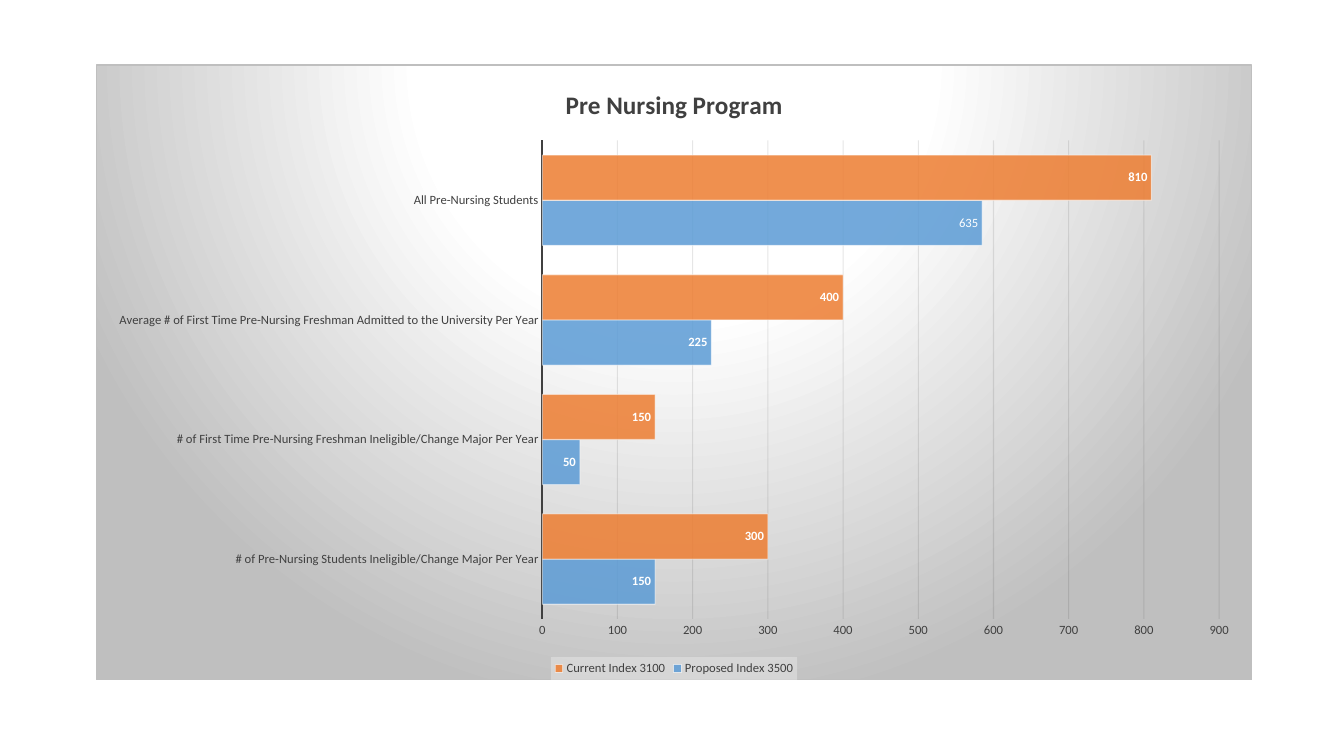
from lxml.etree import SubElement
from pptx import Presentation
from pptx.chart.data import CategoryChartData
from pptx.dml.color import RGBColor
from pptx.enum.chart import (XL_CHART_TYPE as ChartType, XL_LABEL_POSITION as LabelPosition,
                             XL_LEGEND_POSITION as LegendPosition, XL_TICK_MARK as TickMark)
from pptx.oxml import parse_xml
from pptx.oxml.ns import nsdecls, qn
from pptx.util import Inches, Pt

COLORS = {"ink": "404040", "grid": "0D0D0D", "white": "FFFFFF", "edge": "BFBFBF",
          "panel": "F2F2F2", "proposed": "5B9BD5", "current": "ED7D31"}
GRADIENT = [(0, "white"), (39, "white"), (100, "edge")]

STAGES = ["# of Pre-Nursing Students Ineligible/Change Major Per Year",
          "# of First Time Pre-Nursing Freshman Ineligible/Change Major Per Year",
          "Average # of First Time Pre-Nursing Freshman Admitted to the University Per Year",
          "All Pre-Nursing Students"]
INDEXES = [("Proposed Index 3500", "proposed", (150, 50, 225, 585)),
           ("Current Index 3100", "current", (300, 150, 400, 810))]


def set_alpha(element, percent):
    for color in element.iter(qn("a:srgbClr")):
        SubElement(color, qn("a:alpha")).set("val", str(percent * 1000))


class ChartSlide:
    def __init__(self, deck):
        self.width, self.height = deck.slide_width, deck.slide_height
        self.slide = deck.slides.add_slide(deck.slide_layouts[6])
        self.face = "Calibri"

    def style_font(self, font, size, color="ink", bold=False):
        font.name, font.size, font.bold = self.face, Pt(size), bold
        font.color.rgb = RGBColor.from_string(COLORS[color])

    def style_line(self, line, color, width, alpha=100):
        line.color.rgb = RGBColor.from_string(COLORS[color])
        line.width = Pt(width)
        if alpha < 100:
            set_alpha(line._get_or_add_ln(), alpha)

    def add_bars(self, left, top, width, height):
        """Place the clustered bars; lengths are percentages of the slide."""
        data = CategoryChartData()
        data.categories = STAGES
        for name, _, counts in INDEXES:
            data.add_series(name, counts)
        frame = self.slide.shapes.add_chart(
            ChartType.BAR_CLUSTERED, int(self.width * left / 100), int(self.height * top / 100),
            int(self.width * width / 100), int(self.height * height / 100), data)
        chart = frame.chart
        self.style_font(chart.font, 10)
        plot = chart.plots[0]
        plot.gap_width, plot.overlap, plot.vary_by_categories = 65, 0, False
        for series, (_, color, _) in zip(plot.series, INDEXES):
            self.style_series(series, color)
        return chart

    def style_series(self, series, color):
        fill = series.format.fill
        fill.solid()
        fill.fore_color.rgb = RGBColor.from_string(COLORS[color])
        set_alpha(series._element.spPr, 85)
        self.style_line(series.format.line, "white", 0.75, 50)
        labels = series.data_labels
        labels.show_value, labels.position = True, LabelPosition.INSIDE_END
        self.style_font(labels.font, 9, "white", True)

    def override_label(self, series, index, text):
        label = series.points[index].data_label
        run = label.text_frame.paragraphs[0].add_run()
        run.text = text
        self.style_font(run.font, 9, "white")
        label.position = LabelPosition.INSIDE_END

    def add_title(self, chart, text):
        run = chart.chart_title.text_frame.paragraphs[0].add_run()
        run.text = text
        self.style_font(run.font, 18, bold=True)
        chart.chart_title.include_in_layout = False

    def style_axes(self, chart, maximum, step):
        stages, counts = chart.category_axis, chart.value_axis
        for axis in (stages, counts):
            axis.major_tick_mark = axis.minor_tick_mark = TickMark.NONE
            self.style_font(axis.tick_labels.font, 9)
        self.style_line(stages.format.line, "ink", 1.5)
        counts.format.line.fill.background()
        counts.minimum_scale, counts.maximum_scale, counts.major_unit = 0, maximum, step
        self.style_line(counts.major_gridlines.format.line, "grid", 0.75, 10)

    def add_legend(self, chart):
        chart.has_legend = True
        legend = chart.legend
        legend.position, legend.include_in_layout = LegendPosition.BOTTOM, False
        self.style_font(legend.font, 9)
        panel = parse_xml(f'<c:spPr {nsdecls("c", "a")}><a:solidFill>'
                          f'<a:srgbClr val="{COLORS["panel"]}"/></a:solidFill></c:spPr>')
        set_alpha(panel, 39)
        legend._element.find(qn("c:txPr")).addprevious(panel)

    def add_backdrop(self, chart):
        stops = "".join(f'<a:gs pos="{at * 1000}"><a:srgbClr val="{COLORS[color]}"/></a:gs>'
                        for at, color in GRADIENT)
        backdrop = parse_xml(
            f'<c:spPr {nsdecls("c", "a")}><a:gradFill><a:gsLst>{stops}</a:gsLst>'
            '<a:path path="circle"><a:fillToRect l="50000" t="-80000" r="50000" b="180000"/>'
            f'</a:path></a:gradFill><a:ln w="{Pt(0.75)}"><a:solidFill>'
            f'<a:srgbClr val="{COLORS["edge"]}"/></a:solidFill></a:ln></c:spPr>')
        chart._chartSpace.find(qn("c:txPr")).addprevious(backdrop)


def main():
    deck = Presentation()
    deck.slide_width, deck.slide_height = Inches(13.33), Inches(7.5)
    page = ChartSlide(deck)
    bars = page.add_bars(7.13, 8.53, 86.05, 81.47)
    page.add_title(bars, "Pre Nursing Program")
    page.style_axes(bars, 900, 100)
    page.override_label(bars.plots[0].series[0], 3, "635")
    page.add_legend(bars)
    page.add_backdrop(bars)
    deck.save("out.pptx")


if __name__ == "__main__":
    main()
